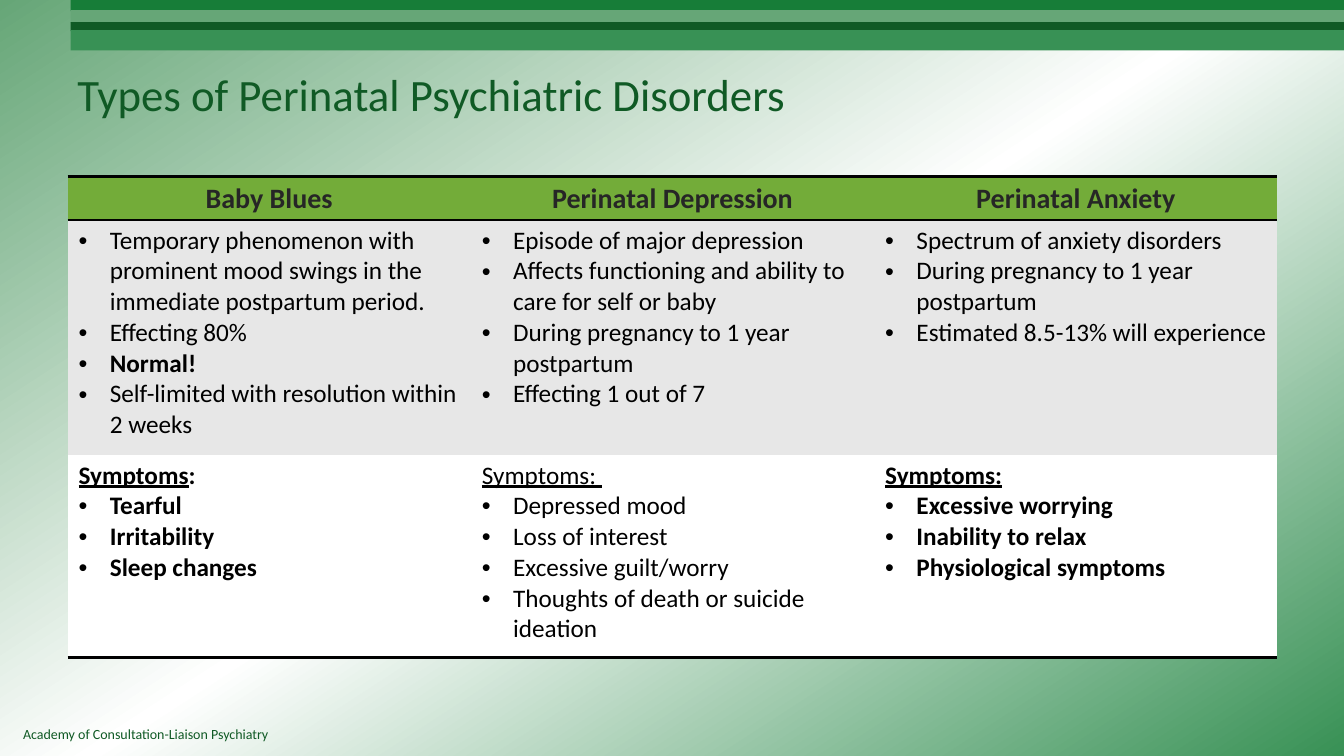
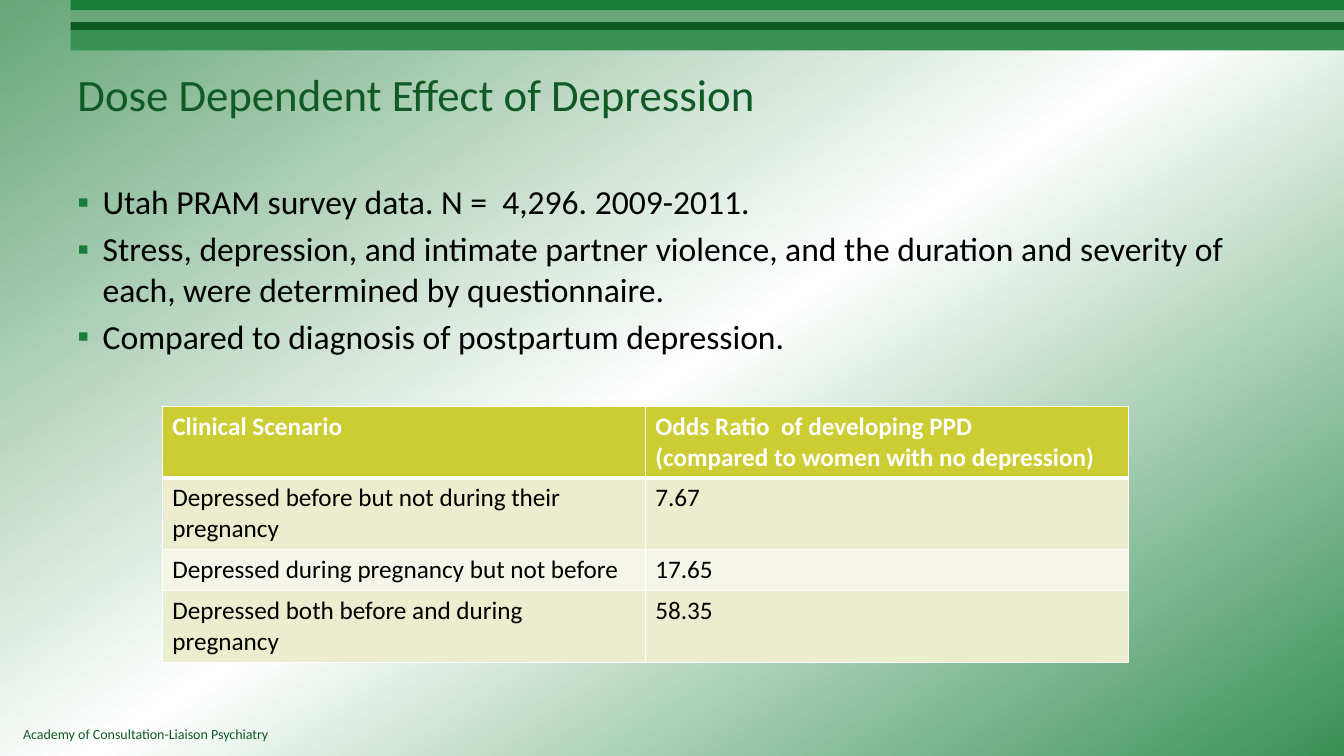
import copy
import pptx
import pptx.dml.color
import pptx.enum.shapes
import pptx.enum.text
import pptx.oxml
import pptx.oxml.ns
import pptx.util

Inches, Pt = pptx.util.Inches, pptx.util.Pt
ALIGN, ANCHOR = pptx.enum.text.PP_ALIGN, pptx.enum.text.MSO_ANCHOR

# Shared look
WIDTH, HEIGHT = 13.33, 7.5
MARGIN, CONTENT_WIDTH, CONTENT_TOP = 0.67, 12, 1.75
FONT = "Calibri"
GREEN, SAGE, FOREST, LEAF = "177D38", "66A677", "105A25", "389155"
BLACK, WHITE = "000000", "FFFFFF"
BACKDROP = [(0, SAGE), (0.5, WHITE), (1, LEAF)]
BACKDROP_ANGLE = 57
BAND_LEFT = 0.7
BANDS = [(0, 0.11, GREEN), (0.1, 0.13, SAGE), (0.22, 0.09, FOREST), (0.3, 0.2, LEAF)]
FOOTER = "Academy of Consultation-Liaison Psychiatry"

# Content: a paragraph is a string, or a list of (text, style) runs
DISORDERS_TITLE = "Types of Perinatal Psychiatric Disorders"
DISORDERS = [
    {
        "name": "Baby Blues",
        "facts": [
            "Temporary phenomenon with prominent mood swings in the immediate postpartum period.",
            "Effecting 80%",
            [("Normal!", "b")],
            "Self-limited with resolution within 2 weeks",
        ],
        "symptoms": [[("Symptoms", "u"), (":", "")], "Tearful", "Irritability", "Sleep changes"],
        "bold": True,
    },
    {
        "name": "Perinatal Depression",
        "facts": [
            "Episode of major depression",
            "Affects functioning and ability to care for self or baby",
            "During pregnancy to 1 year postpartum",
            "Effecting 1 out of 7",
        ],
        "symptoms": [
            [("Symptoms: ", "u")],
            "Depressed mood",
            "Loss of interest",
            "Excessive guilt/worry",
            "Thoughts of death or suicide ideation",
        ],
        "bold": False,
    },
    {
        "name": "Perinatal Anxiety",
        "facts": [
            "Spectrum of anxiety disorders",
            "During pregnancy to 1 year postpartum",
            "Estimated 8.5-13% will experience",
        ],
        "symptoms": [
            [("Symptoms:", "u")],
            "Excessive worrying",
            "Inability to relax",
            "Physiological symptoms",
        ],
        "bold": True,
    },
]

DOSE_TITLE = "Dose Dependent Effect of Depression"
SURVEY = [
    "Utah PRAM survey data. N =  4,296. 2009-2011.",
    "Stress, depression, and intimate partner violence, and the duration and severity of each, "
    "were determined by questionnaire.",
    "Compared to diagnosis of postpartum depression.",
]
ODDS = [
    (["Clinical Scenario"], ["Odds Ratio  of developing PPD", "(compared to women with no depression)"]),
    (["Depressed before but not during their pregnancy"], ["7.67"]),
    (["Depressed during pregnancy but not before"], ["17.65"]),
    (["Depressed both before and during pregnancy"], ["58.35"]),
]


def rgb(value):
    return pptx.dml.color.RGBColor.from_string(value)


def element(tag, children="", **attributes):
    listed = "".join(f' {key}="{value}"' for key, value in attributes.items())
    space = pptx.oxml.ns.nsdecls("a")
    return pptx.oxml.parse_xml(f"<a:{tag} {space}{listed}>{children}</a:{tag}>")


def solid(color):
    return f'<a:solidFill><a:srgbClr val="{color}"/></a:solidFill>'


def write(frame, paragraphs, size=18, color=BLACK, bold=False, align=ALIGN.LEFT,
          bullet=None, bullet_color=BLACK, indent=0, plain=0, before=0):
    """Fill a text frame; the first `plain` paragraphs carry no bullet."""
    frame.word_wrap = True
    for index, content in enumerate(paragraphs):
        paragraph = frame.paragraphs[0] if index == 0 else frame.add_paragraph()
        paragraph.alignment, paragraph.space_before = align, Pt(before)
        runs = [(content, "")] if isinstance(content, str) else content
        for text, style in runs:
            run = paragraph.add_run()
            run.text = text
            font = run.font
            font.name, font.size, font.color.rgb = FONT, Pt(size), rgb(color)
            font.bold, font.underline = bold or "b" in style, "u" in style
        if bullet and index >= plain:
            props = paragraph._p.get_or_add_pPr()
            props.set("marL", str(Inches(indent)))
            props.set("indent", str(-Inches(indent)))
            props.append(element("buClr", f'<a:srgbClr val="{bullet_color}"/>'))
            props.append(element("buFont", typeface="Arial"))
            props.append(element("buChar", char=bullet))


def add_text(slide, box, paragraphs, anchor=ANCHOR.TOP, **form):
    frame = slide.shapes.add_textbox(*map(Inches, box)).text_frame
    frame.vertical_anchor = anchor
    write(frame, paragraphs, **form)


def add_table(slide, left, top, widths, heights):
    frame = slide.shapes.add_table(len(heights), len(widths), Inches(left), Inches(top),
                                   Inches(sum(widths)), Inches(sum(heights)))
    table = frame.table
    table.first_row = table.horz_banding = False
    for column, width in zip(table.columns, widths):
        column.width = Inches(width)
    for row, height in zip(table.rows, heights):
        row.height = Inches(height)
    return table


def dress(cell, fill, edges, inset=0.1):
    """Set a cell's fill, side margins and borders; edges maps L, R, T, B to (colour, points)."""
    cell.fill.solid()
    cell.fill.fore_color.rgb = rgb(fill)
    cell.margin_left = cell.margin_right = Inches(inset)
    props = cell._tc.get_or_add_tcPr()
    for place, side in enumerate("LRTB"):
        color, points = edges.get(side, (None, 0))
        line = solid(color) if color else "<a:noFill/>"
        props.insert(place, element("ln" + side, line, w=Pt(points)))


def set_backdrop(master):
    fill = master.background.fill
    fill.gradient()
    fill.gradient_angle = 360 - BACKDROP_ANGLE
    stops = master.element.find(".//" + pptx.oxml.ns.qn("p:bg")).find(".//" + pptx.oxml.ns.qn("a:gsLst"))
    stops.append(copy.deepcopy(stops[-1]))
    for stop, (position, color) in zip(fill.gradient_stops, BACKDROP):
        stop.position, stop.color.rgb = position, rgb(color)


def add_slide(deck, title):
    slide = deck.slides.add_slide(deck.slide_layouts[6])
    for top, height, color in BANDS:
        band = slide.shapes.add_shape(pptx.enum.shapes.MSO_SHAPE.RECTANGLE, Inches(BAND_LEFT),
                                      Inches(top), Inches(WIDTH - BAND_LEFT), Inches(height))
        band.shadow.inherit = False
        band.fill.solid()
        band.fill.fore_color.rgb = rgb(color)
        band.line.fill.background()
    add_text(slide, (0.13, 7.15, 9.25, 0.27), [FOOTER], size=10, color=FOREST)
    add_text(slide, (MARGIN, 0.3, CONTENT_WIDTH, 1.25), [title], ANCHOR.MIDDLE, size=32, color=FOREST)
    return slide


def add_disorders(deck):
    slide = add_slide(deck, DISORDERS_TITLE)
    count = len(DISORDERS)
    table = add_table(slide, MARGIN, CONTENT_TOP, [CONTENT_WIDTH / count] * count, [0.43, 2.33, 2.01])
    rule = (BLACK, 2)
    rows = [("73AC39", {"T": rule, "B": rule}), ("E7E7E7", {"T": rule}), (WHITE, {"B": rule})]
    bulleted = {"bullet": "•", "indent": 0.31}
    for column, disorder in enumerate(DISORDERS):
        cells = [table.cell(row, column) for row in range(len(rows))]
        for cell, (fill, edges) in zip(cells, rows):
            dress(cell, fill, edges, inset=0.11)
        name, facts, symptoms = (cell.text_frame for cell in cells)
        write(name, [disorder["name"]], size=20, color="262626", bold=True, align=ALIGN.CENTER)
        write(facts, disorder["facts"], **bulleted)
        write(symptoms, disorder["symptoms"], bold=disorder["bold"], plain=1, **bulleted)


def add_dose_effect(deck):
    slide = add_slide(deck, DOSE_TITLE)
    add_text(slide, (MARGIN, CONTENT_TOP, CONTENT_WIDTH, 2.1), SURVEY, size=24, before=4.8,
             bullet="▪", bullet_color=GREEN, indent=0.25)
    table = add_table(slide, 1.61, 4.03, [4.79] * 2, [0.71, 0.71, 0.41, 0.71])
    thin, thick = (WHITE, 1), (WHITE, 3)
    for row, texts in enumerate(ODDS):
        header = row == 0
        fill = "CCCC33" if header else ("F6F6E8", "ECECCE")[row % 2]
        edges = {"L": thin, "R": thin, "T": thick if row == 1 else thin, "B": thick if header else thin}
        for column, paragraphs in enumerate(texts):
            cell = table.cell(row, column)
            dress(cell, fill, edges)
            write(cell.text_frame, paragraphs, bold=header, color=WHITE if header else BLACK)


def main():
    deck = pptx.Presentation()
    deck.slide_width, deck.slide_height = Inches(WIDTH), Inches(HEIGHT)
    set_backdrop(deck.slide_master)
    add_disorders(deck)
    add_dose_effect(deck)
    deck.save("out.pptx")


if __name__ == "__main__":
    main()
